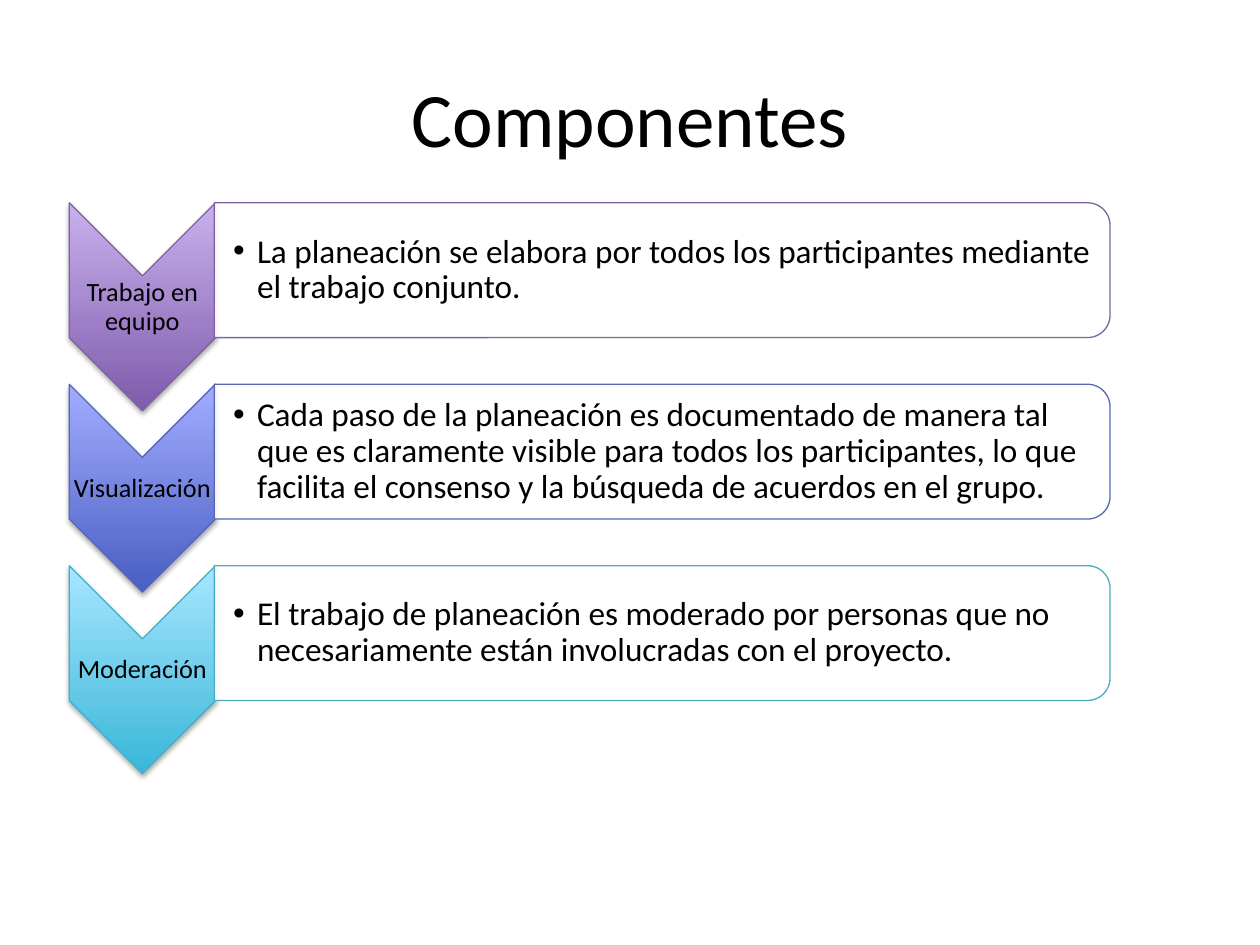
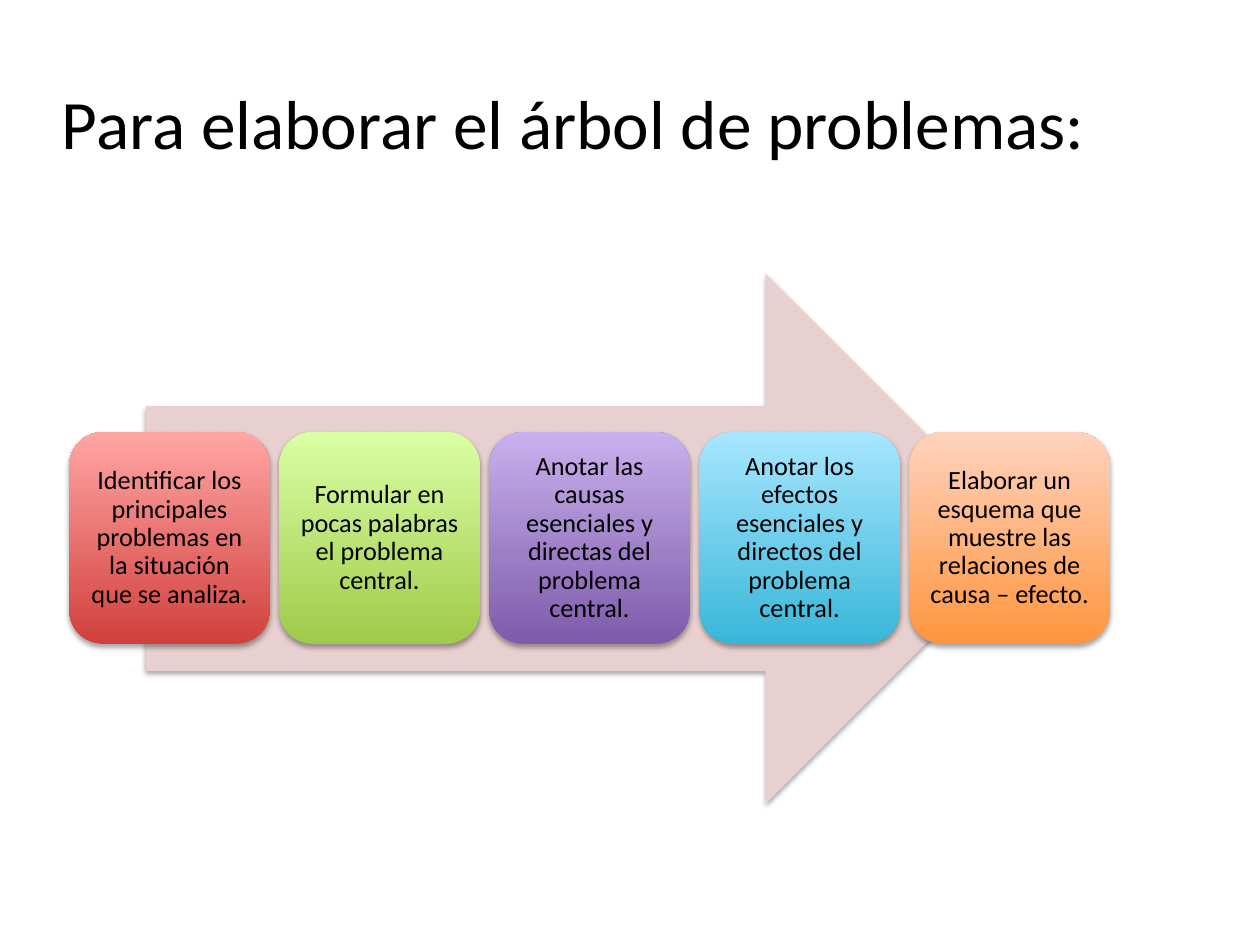
from dataclasses import dataclass

from lxml.etree import SubElement
from pptx import Presentation
from pptx.dml.color import RGBColor
from pptx.enum.shapes import MSO_SHAPE as Preset
from pptx.enum.text import MSO_ANCHOR as Anchor, PP_ALIGN as Align
from pptx.oxml.ns import qn
from pptx.util import Inches, Pt


@dataclass(frozen=True)
class Theme:
    """Colours, font and type sizes shared by the slides."""
    font: str = "Calibri"
    text: str = "000000"
    panel: str = "FFFFFF"
    arrow: str = "E8D0D0"
    red: tuple = ("D1403C", "FFA6A5")
    green: tuple = ("A0CA4A", "DAFFA5")
    purple: tuple = ("7F5BAB", "C8B0ED")
    blue: tuple = ("495EC2", "A2ADFF")
    cyan: tuple = ("39B7D8", "A7E6FF")
    orange: tuple = ("FF953E", "FFD2BD")
    purple_line: str = "8064A2"
    blue_line: str = "5767B4"
    cyan_line: str = "4BACC6"
    title_size: float = 44
    long_title_size: float = 39.6
    detail_size: float = 19
    label_size: float = 15


THEME = Theme()

COMPONENTS = [
    ("Trabajo en equipo", THEME.purple, THEME.purple_line,
     "La planeación se elabora por todos los participantes mediante el trabajo conjunto."),
    ("Visualización", THEME.blue, THEME.blue_line,
     "Cada paso de la planeación es documentado de manera tal que es claramente visible "
     "para todos los participantes, lo que facilita el consenso y la búsqueda de acuerdos "
     "en el grupo."),
    ("Moderación", THEME.cyan, THEME.cyan_line,
     "El trabajo de planeación es moderado por personas que no necesariamente están "
     "involucradas con el proyecto."),
]

STEPS = [
    ("Identificar los principales problemas en la situación que se analiza.", THEME.red),
    ("Formular en pocas palabras el problema central.", THEME.green),
    ("Anotar las causas esenciales y directas del problema central.", THEME.purple),
    ("Anotar los efectos esenciales y directos del problema central.", THEME.cyan),
    ("Elaborar un esquema que muestre las relaciones de causa – efecto.", THEME.orange),
]


def write_text(shape, text, size, align=Align.CENTER, spacing=0.9):
    """Write one formatted paragraph in a shape and return it."""
    frame = shape.text_frame
    frame.word_wrap = True
    frame.vertical_anchor = Anchor.MIDDLE
    paragraph = frame.paragraphs[0]
    paragraph.alignment = align
    paragraph.line_spacing = spacing
    run = paragraph.add_run()
    run.text = text
    run.font.name = THEME.font
    run.font.size = Pt(size)
    run.font.color.rgb = RGBColor.from_string(THEME.text)
    return paragraph


def set_margins(shape, margin, left=None):
    """Set the text margins, with an optional wider left one."""
    frame = shape.text_frame
    frame.margin_top = frame.margin_right = frame.margin_bottom = Inches(margin)
    frame.margin_left = Inches(margin if left is None else left)


def add_titled_slide(presentation, title, size, box):
    """Add a title-only slide with a placed title."""
    slide = presentation.slides.add_slide(presentation.slide_layouts[5])
    shape = slide.shapes.title
    shape.left, shape.top, shape.width, shape.height = map(Inches, box)
    write_text(shape, title, size, spacing=1.0)
    return slide


def add_preset(shapes, preset, box, fill, line=None, turned=False):
    """Add a solid or gradient shape whose box is given as seen after a quarter turn."""
    left, top, width, height = box
    if turned:
        left, top = left + (width - height) / 2, top + (height - width) / 2
        width, height = height, width
    shape = shapes.add_shape(preset, *map(Inches, (left, top, width, height)))
    shape.rotation = 90 if turned else 0
    shape.shadow.inherit = False
    if isinstance(fill, tuple):
        fill_gradient(shape, fill)
    else:
        shape.fill.solid()
        shape.fill.fore_color.rgb = RGBColor.from_string(fill)
    if line:
        shape.line.color.rgb = RGBColor.from_string(line)
        shape.line.width = Pt(0.75)
    else:
        shape.line.fill.background()
    return shape


def fill_gradient(shape, colours):
    """Fill upward from the dark to the light colour, whatever the rotation."""
    shape.fill.gradient()
    shape.fill.gradient_angle = 90
    for stop, colour, position in zip(shape.fill.gradient_stops, colours, (0, 1)):
        stop.color.rgb = RGBColor.from_string(colour)
        stop.position = position
    shape.element.spPr.find(qn("a:gradFill")).set("rotWithShape", "0")


def add_alpha(colour, percent):
    """Set the opacity of a colour element."""
    SubElement(colour, qn("a:alpha")).set("val", str(percent * 1000))


def add_shadow(shape):
    """Add a soft shadow below a shape."""
    effects = shape.element.spPr.find(qn("a:effectLst"))
    shadow = SubElement(effects, qn("a:outerShdw"), blurRad=str(Pt(3.1)),
                        dist=str(Pt(1.8)), dir="5400000", rotWithShape="0")
    add_alpha(SubElement(shadow, qn("a:srgbClr"), val="000000"), 35)


def add_bullet(paragraph):
    """Give a paragraph a hanging bullet."""
    properties = paragraph._p.get_or_add_pPr()
    properties.set("marL", str(Inches(0.19)))
    properties.set("indent", str(-Inches(0.19)))
    SubElement(properties, qn("a:buFont"), typeface="Arial")
    SubElement(properties, qn("a:buChar"), char="•")


def add_component(shapes, top, label, colours, line, detail):
    """Add a downward chevron with its label and detail panel."""
    chevron = add_preset(shapes, Preset.CHEVRON, (0.55, top, 1.16, 1.65),
                         colours, line, turned=True)
    add_shadow(chevron)
    label_box = shapes.add_textbox(*map(Inches, (0.55, top + 0.58, 1.16, 0.5)))
    set_margins(label_box, 0.01)
    write_text(label_box, label, THEME.label_size)

    panel = add_preset(shapes, Preset.ROUND_2_SAME_RECTANGLE, (1.7, top, 7.11, 1.07),
                       THEME.panel, line, turned=True)
    add_alpha(panel.element.spPr.find(qn("a:solidFill"))[0], 90)
    detail_box = shapes.add_textbox(*map(Inches, (1.7, top + 0.05, 7.05, 0.97)))
    set_margins(detail_box, 0.01, left=0.15)
    add_bullet(write_text(detail_box, detail, THEME.detail_size, Align.LEFT))


def add_step(shapes, left, text, colours):
    """Add a rounded card for one step."""
    card = add_preset(shapes, Preset.ROUNDED_RECTANGLE, (left, 3.43, 1.59, 1.68), colours)
    add_shadow(card)
    set_margins(card, 0.06)
    write_text(card, text, THEME.label_size)


def build_components(presentation):
    """Build the slide of planning components."""
    slide = add_titled_slide(presentation, "Componentes", THEME.title_size,
                             (0.5, 0.3, 9, 1.25))
    shapes = slide.shapes.add_group_shape().shapes
    for index, component in enumerate(COMPONENTS):
        add_component(shapes, 1.61 + index * 1.44, *component)


def build_problem_tree(presentation):
    """Build the slide of steps towards the problem tree."""
    slide = add_titled_slide(presentation, "Para elaborar el árbol de problemas:",
                             THEME.long_title_size, (0.29, 0.58, 8.52, 0.77))
    shapes = slide.shapes.add_group_shape().shapes
    arrow = add_preset(shapes, Preset.RIGHT_ARROW, (1.16, 2.17, 7.02, 4.21), THEME.arrow)
    arrow.adjustments[1] = 0.5
    add_shadow(arrow)
    for index, step in enumerate(STEPS):
        add_step(shapes, 0.55 + index * 1.667, *step)


def main():
    """Build and save the presentation."""
    presentation = Presentation()
    presentation.slide_width = Inches(10)
    presentation.slide_height = Inches(7.5)
    build_components(presentation)
    build_problem_tree(presentation)
    presentation.save("out.pptx")


if __name__ == "__main__":
    main()
